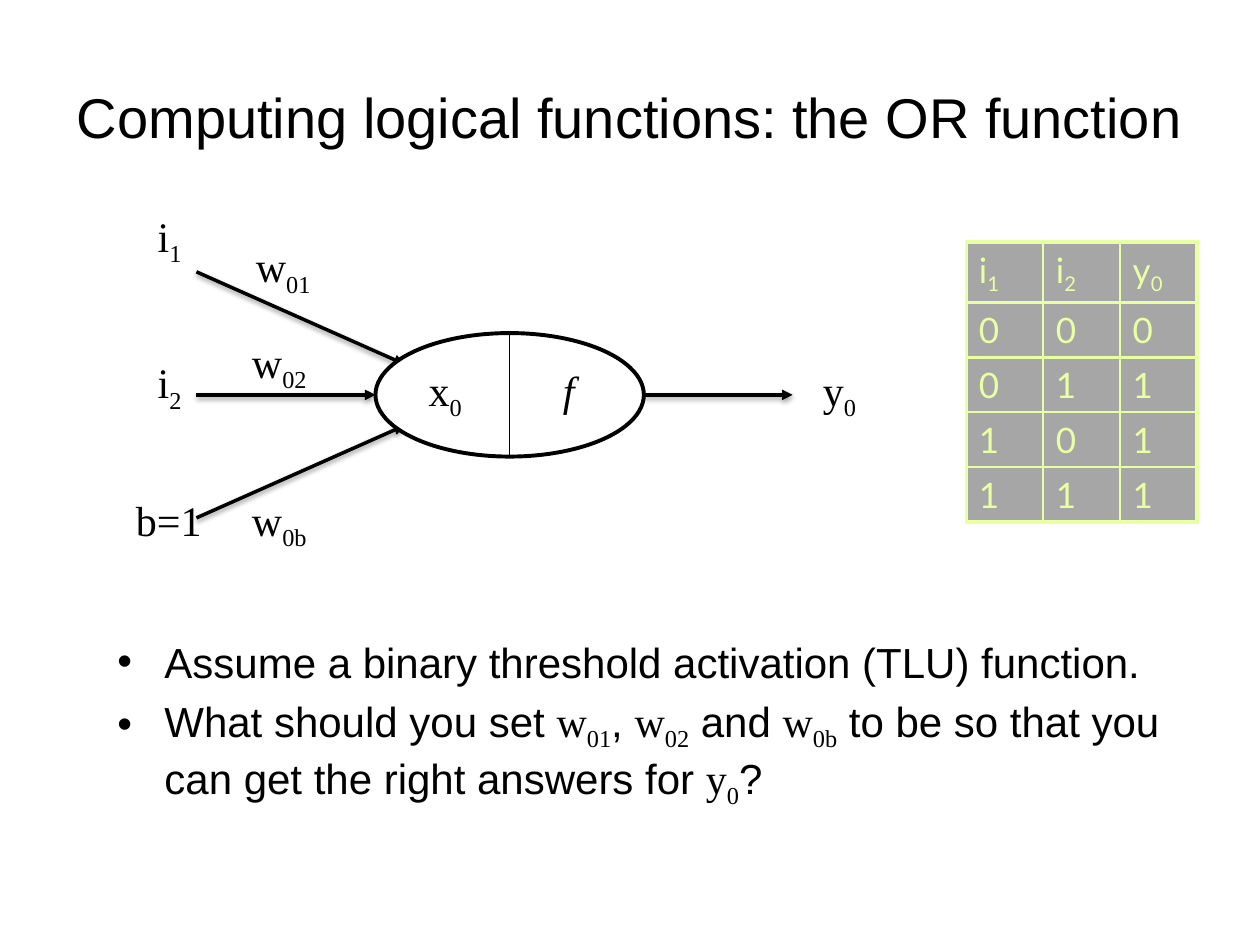
from lxml.etree import SubElement
from pptx import Presentation
from pptx.dml.color import RGBColor
from pptx.enum.shapes import MSO_CONNECTOR, MSO_SHAPE
from pptx.enum.text import MSO_ANCHOR, PP_ALIGN
from pptx.oxml import parse_xml
from pptx.oxml.ns import nsdecls, qn
from pptx.util import Cm, Pt

SANS, SERIF, CELL = "Arial", "Times New Roman", "Lato"
BLACK, WHITE, GREY, LIME = "000000", "FFFFFF", "A6A6A6", "E9FFA3"
TITLE = "Computing logical functions: the OR function"
POINTS = [
    "Assume a binary threshold activation (TLU) function.",
    "What should you set $w_01$, $w_02$ and $w_0b$ to be so that you "
    "can get the right answers for $y_0$?",
]
TRUTH = ["i_1 i_2 y_0", "0 0 0", "0 1 1", "1 0 1", "1 1 1"]
LABELS = [
    ("x_0", 8.64, 7.34), ("i_1", 3.18, 4.24), ("w_01", 5.16, 4.85),
    ("y_0", 16.59, 7.34), ("i_2", 3.18, 7.19), ("b=1", 2.74, 9.96),
    ("w_02", 5.08, 6.78), ("w_0b", 5.08, 9.96),
]
MID = 7.96  # height of the neuron's axis


def rgb(code):
    return RGBColor.from_string(code)


def write(para, text, font=SERIF, size=24, color=BLACK, italic=False):
    """Add text to a paragraph; what follows "_" is a subscript."""
    for base, piece in zip((None, "-25000"), text.split("_")):
        run = para.add_run()
        run.text = piece
        run.font.name, run.font.size = font, Pt(size)
        run.font.color.rgb = rgb(color)
        if italic:
            run.font.italic = True
        if base:
            run.font._element.set("baseline", base)


def place(shape, x, y, w, h):
    shape.left, shape.top, shape.width, shape.height = map(Cm, (x, y, w, h))


def head(slide):
    title = slide.shapes.title
    place(title, 1.27, 0.76, 22.86, 3.18)
    frame = title.text_frame
    frame.vertical_anchor = MSO_ANCHOR.MIDDLE
    para = frame.paragraphs[0]
    para.alignment = PP_ALIGN.CENTER
    write(para, TITLE, font=SANS, size=32)


def points(slide):
    """Fill the body; text between "$" signs is set as maths."""
    body = slide.placeholders[1]
    place(body, 2.11, 12.7, 22.23, 5.08)
    frame = body.text_frame
    for num, line in enumerate(POINTS):
        para = frame.add_paragraph() if num else frame.paragraphs[0]
        para.space_before = Pt(4.8)
        props = para._p.get_or_add_pPr()
        props.set("marL", str(Cm(0.95)))
        props.set("indent", str(Cm(-0.95)))
        SubElement(props, qn("a:buChar"), char="•")
        for part, text in enumerate(line.split("$")):
            write(para, text, font=SERIF if part % 2 else SANS)


def label(slide, text, x, y, **form):
    box = slide.shapes.add_textbox(Cm(x), Cm(y), Cm(1.63), Cm(1.24))
    frame = box.text_frame
    frame.word_wrap = True
    frame.margin_left = frame.margin_right = 0
    frame.margin_top = frame.margin_bottom = 0
    write(frame.paragraphs[0], text, **form)


def line(slide, x1, y1, x2, y2, width):
    """Draw a plain line without a shadow and return it with its effects."""
    link = slide.shapes.add_connector(
        MSO_CONNECTOR.STRAIGHT, Cm(x1), Cm(y1), Cm(x2), Cm(y2))
    link.line.color.rgb = rgb(BLACK)
    link.line.width = Pt(width)
    props = link._element.spPr
    return link, SubElement(props, qn("a:effectLst"))


def arrow(slide, x1, y1, x2, y2):
    link, effects = line(slide, x1, y1, x2, y2, 2)
    SubElement(link.line._get_or_add_ln(), qn("a:tailEnd"), type="triangle")
    effects.append(parse_xml(
        f'<a:outerShdw {nsdecls("a")} blurRad="{Pt(3.1)}" dist="{Pt(1.6)}" '
        'dir="5400000" rotWithShape="0"><a:srgbClr val="000000">'
        '<a:alpha val="38000"/></a:srgbClr></a:outerShdw>'))


def neuron(slide):
    x, w, h = 7.57, 5.41, 2.49
    for start, end, tip in ((-2.48, -0.62, 8.15), (0, 0, x), (2.48, 0.62, 8.15)):
        arrow(slide, 3.96, MID + start, tip, MID + end)
    arrow(slide, x + w, MID, 15.98, MID)
    oval = slide.shapes.add_shape(
        MSO_SHAPE.OVAL, Cm(x), Cm(MID - h / 2), Cm(w), Cm(h))
    oval.shadow.inherit = False
    oval.fill.solid()
    oval.fill.fore_color.rgb = rgb(WHITE)
    oval.line.color.rgb = rgb(BLACK)
    oval.line.width = Pt(2.25)
    mid = x + w / 2
    line(slide, mid, MID - h / 2, mid, MID + h / 2, 0.75)
    for text, left, top in LABELS:
        label(slide, text, left, top)
    label(slide, "f", 11.35, 7.34, italic=True)


def border(cell, side, width):
    edge = SubElement(cell._tc.get_or_add_tcPr(), qn(f"a:ln{side}"),
                      w=str(Pt(width)))
    fill = SubElement(edge, qn("a:solidFill"))
    SubElement(fill, qn("a:srgbClr"), val=LIME)


def table(slide):
    rows = [row.split() for row in TRUTH]
    tall, wide = len(rows), len(rows[0])
    grid = slide.shapes.add_table(
        tall, wide, Cm(19.48), Cm(4.88), Cm(4.65), Cm(5.4)).table
    grid.first_row = grid.horz_banding = False
    for r, row in enumerate(rows):
        for c, text in enumerate(row):
            cell = grid.cell(r, c)
            outer = {"L": c == 0, "R": c == wide - 1,
                     "T": r == 0, "B": r == tall - 1}
            for side, rim in outer.items():
                border(cell, side, 2.25 if rim else 1.5)
            cell.fill.solid()
            cell.fill.fore_color.rgb = rgb(GREY)
            write(cell.text_frame.paragraphs[0], text,
                  font=CELL, size=20, color=LIME)


def main():
    deck = Presentation()
    deck.slide_width, deck.slide_height = Cm(25.4), Cm(19.05)
    slide = deck.slides.add_slide(deck.slide_layouts[1])
    head(slide)
    points(slide)
    table(slide)
    neuron(slide)
    deck.save("out.pptx")


if __name__ == "__main__":
    main()
